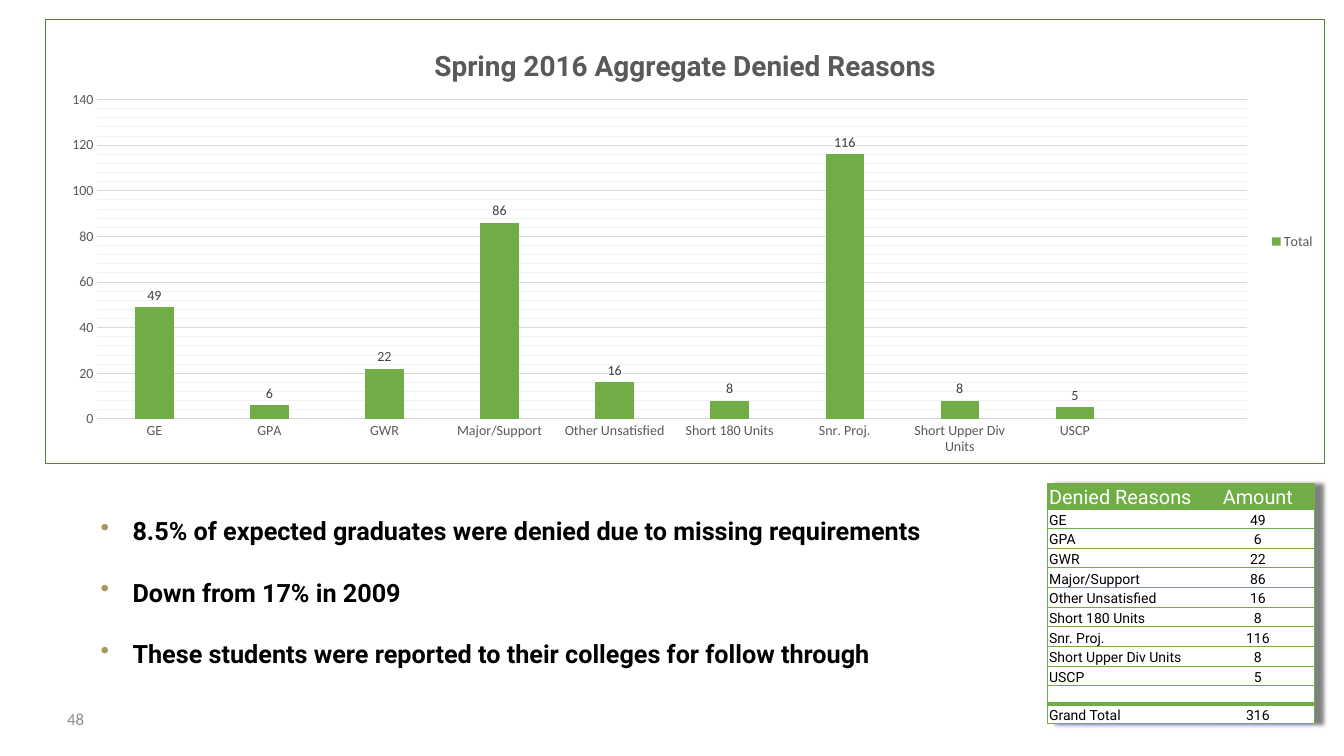
"""Build the Spring 2016 denied reasons slide with a chart, a table and findings."""
from dataclasses import dataclass
from typing import Optional

from lxml import etree
from pptx import Presentation
from pptx import util as u
from pptx.chart import data
from pptx.dml.color import RGBColor
from pptx.enum import chart as charts
from pptx.enum import text
from pptx.oxml import ns

GREEN = RGBColor(0x70, 0xAD, 0x47)
DARK_GREEN = RGBColor(0x54, 0x82, 0x35)
GOLD = RGBColor(0xA9, 0x98, 0x5D)
BLACK = RGBColor(0x00, 0x00, 0x00)
WHITE = RGBColor(0xFF, 0xFF, 0xFF)
CHART_GRAY = RGBColor(0x59, 0x59, 0x59)
LABEL_GRAY = RGBColor(0x40, 0x40, 0x40)
NUMBER_GRAY = RGBColor(0x8C, 0x8C, 0x8C)
GRID = RGBColor(0xD9, 0xD9, 0xD9)
MINOR_GRID = RGBColor(0xF2, 0xF2, 0xF2)


@dataclass(frozen=True)
class Reason:
    """A denial reason and its count."""
    name: str
    amount: Optional[int]


REASONS = [
    Reason("GE", 49), Reason("GPA", 6), Reason("GWR", 22),
    Reason("Major/Support", 86), Reason("Other Unsatisfied", 16),
    Reason("Short 180 Units", 8), Reason("Snr. Proj.", 116),
    Reason("Short Upper Div Units", 8), Reason("USCP", 5), Reason(" ", None),
]
FINDINGS = [
    "8.5% of expected graduates were denied due to missing requirements",
    "Down from 17% in 2009",
    "These students were reported to their colleges for follow through",
]


def add(parent, tag: str, **attributes):
    """Append an XML child and return it."""
    return etree.SubElement(parent, ns.qn(tag), attributes)


def add_fill(parent, color: RGBColor) -> None:
    """Append a solid fill."""
    add(add(parent, "a:solidFill"), "a:srgbClr", val=str(color))


def style(font, size: float, color: RGBColor, name: str = "Roboto", bold: bool = False) -> None:
    """Set the look of a font."""
    font.size, font.name, font.bold = u.Pt(size), name, bold
    font.color.rgb = color


def stroke(line, color: RGBColor) -> None:
    """Give a chart line its colour and width."""
    line.color.rgb = color
    line.width = u.Pt(0.75)


def layout(parent, index: int, **fractions: float) -> None:
    """Place a chart part by fractions of the chart area."""
    for old in parent.findall(ns.qn("c:layout")):
        parent.remove(old)
    holder = etree.Element(ns.qn("c:layout"))
    manual = add(holder, "c:manualLayout")
    if "w" in fractions:
        add(manual, "c:layoutTarget", val="inner")
    for side in "xy":
        add(manual, f"c:{side}Mode", val="edge")
    for key, value in fractions.items():
        add(manual, f"c:{key}", val=str(value))
    parent.insert(index, holder)


def add_reason_chart(slide) -> None:
    """Draw the column chart of denial reasons."""
    counts = data.CategoryChartData()
    counts.categories = [reason.name for reason in REASONS]
    counts.add_series("Total", [reason.amount for reason in REASONS])
    chart = slide.shapes.add_chart(
        charts.XL_CHART_TYPE.COLUMN_CLUSTERED, u.Inches(0.54), u.Inches(0.23),
        u.Inches(15.23), u.Inches(5.29), counts).chart
    style(chart.font, 12, CHART_GRAY, "Calibri")

    chart.has_title = True
    title = chart.chart_title
    heading = title.text_frame.paragraphs[0]
    heading.text = "Spring 2016 Aggregate Denied Reasons"
    style(heading.font, 24, CHART_GRAY, bold=True)
    layout(title._element, 1, x=0.3, y=0.05)

    chart.has_legend = True
    chart.legend.position = charts.XL_LEGEND_POSITION.RIGHT
    chart.legend.include_in_layout = False
    style(chart.legend.font, 12, CHART_GRAY, "Calibri")

    for axis in (chart.category_axis, chart.value_axis):
        axis.major_tick_mark = axis.minor_tick_mark = charts.XL_TICK_MARK.NONE
        style(axis.tick_labels.font, 12, CHART_GRAY, "Calibri")
    stroke(chart.category_axis.format.line, GRID)
    amounts = chart.value_axis
    amounts.minimum_scale, amounts.maximum_scale = 0, 140
    amounts.major_unit, amounts.minor_unit = 20, 4
    amounts.format.line.fill.background()
    amounts.has_major_gridlines = amounts.has_minor_gridlines = True
    stroke(amounts.major_gridlines.format.line, GRID)
    minor_gridlines = amounts._element.find(ns.qn("c:minorGridlines"))
    add_fill(add(add(minor_gridlines, "c:spPr"), "a:ln", w=str(u.Pt(0.75))), MINOR_GRID)

    plot = chart.plots[0]
    plot.gap_width = 199
    plot.vary_by_categories = False
    total = plot.series[0]
    total.format.fill.solid()
    total.format.fill.fore_color.rgb = GREEN
    labels = total.data_labels
    labels.show_value = True
    labels.position = charts.XL_LABEL_POSITION.OUTSIDE_END
    style(labels.font, 12, LABEL_GRAY, "Calibri")

    space = chart._chartSpace
    layout(space.chart.plotArea, 0, x=0.04, y=0.18, w=0.9, h=0.72)
    area = etree.Element(ns.qn("c:spPr"))
    add_fill(area, WHITE)
    add_fill(add(area, "a:ln", w=str(u.Pt(0.75))), DARK_GREEN)
    space.chart.addnext(area)


def set_borders(cell, widths: dict[str, float]) -> None:
    """Draw the four cell borders, with width 0 meaning none."""
    properties = cell._tc.get_or_add_tcPr()
    for index, side in enumerate("LRTB"):
        line = etree.Element(ns.qn(f"a:ln{side}"), w=str(u.Pt(widths[side])))
        if widths[side]:
            add_fill(line, GREEN)
        else:
            add(line, "a:noFill")
        properties.insert(index, line)


def add_reason_table(slide) -> None:
    """Draw the table of reasons with its total."""
    total = sum(reason.amount or 0 for reason in REASONS)
    rows = [("Denied Reasons", "Amount")]
    rows += [(r.name.strip(), "" if r.amount is None else str(r.amount)) for r in REASONS]
    rows.append(("Grand Total", str(total)))
    last = len(rows) - 1
    table = slide.shapes.add_table(
        len(rows), 2, u.Inches(12.47), u.Inches(5.76), u.Inches(3.18), u.Inches(2.86)).table
    table.first_row = table.horz_banding = False
    table.columns[0].width, table.columns[1].width = u.Inches(1.83), u.Inches(1.35)

    effects = etree.Element(ns.qn("a:effectLst"))
    shadow = add(effects, "a:outerShdw", blurRad=str(u.Pt(4)), dist=str(u.Pt(7)), dir="0")
    add(add(shadow, "a:srgbClr", val=str(BLACK)), "a:alpha", val="50000")
    table._tbl.tblPr.insert(0, effects)

    row_heights = {0: 0.3, last - 1: 0.22}
    body_height = (2.86 - sum(row_heights.values())) / (len(rows) - len(row_heights))
    for row, entries in enumerate(rows):
        header = row == 0
        table.rows[row].height = u.Inches(row_heights.get(row, body_height))
        for column, entry in enumerate(entries):
            cell = table.cell(row, column)
            cell.margin_left = cell.margin_right = cell.margin_top = u.Inches(0.02)
            cell.margin_bottom = 0
            cell.vertical_anchor = text.MSO_ANCHOR.BOTTOM
            cell.fill.solid()
            cell.fill.fore_color.rgb = GREEN if header else WHITE
            set_borders(cell, {"L": 1 - column, "R": column, "T": 4 if row == last else 1,
                               "B": 4 if row == last - 1 else 1})
            paragraph = cell.text_frame.paragraphs[0]
            paragraph.alignment = text.PP_ALIGN.CENTER if column else text.PP_ALIGN.LEFT
            style(paragraph.font, 17 if header else 12, WHITE if header else BLACK)
            if entry:
                paragraph.text = entry
            else:
                add(paragraph._p, "a:endParaRPr", sz="1200")


def add_findings(slide) -> None:
    """Write the bulleted findings."""
    frame = slide.shapes.add_textbox(
        u.Inches(1.1), u.Inches(6.09), u.Inches(10.24), u.Inches(1.92)).text_frame
    frame.word_wrap = True
    for index, finding in enumerate(FINDINGS):
        paragraph = frame.paragraphs[0] if index == 0 else frame.add_paragraph()
        paragraph.text = finding
        properties = paragraph._p.get_or_add_pPr()
        properties.set("marL", str(u.Inches(0.38)))
        properties.set("indent", str(u.Inches(-0.38)))
        add(add(properties, "a:buClr"), "a:srgbClr", val=str(GOLD))
        add(properties, "a:buChar", char="•")
        style(paragraph.font, 21.6, BLACK, bold=True)
        if index:
            paragraph.space_before = u.Pt(26.5)


def add_page_number(slide) -> None:
    """Write the page number."""
    frame = slide.shapes.add_textbox(
        u.Inches(0.18), u.Inches(8.28), u.Inches(0.92), u.Inches(0.56)).text_frame
    frame.word_wrap = True
    frame.vertical_anchor = text.MSO_ANCHOR.MIDDLE
    number = frame.paragraphs[0]
    number.text = "48"
    number.alignment = text.PP_ALIGN.RIGHT
    style(number.font, 14.4, NUMBER_GRAY, "Calibri")


def main() -> None:
    """Build and save the slide."""
    deck = Presentation()
    deck.slide_width, deck.slide_height = u.Inches(16), u.Inches(9)
    slide = deck.slides.add_slide(deck.slide_layouts[6])
    for draw in (add_reason_chart, add_reason_table, add_findings, add_page_number):
        draw(slide)
    deck.save("out.pptx")


if __name__ == "__main__":
    main()
